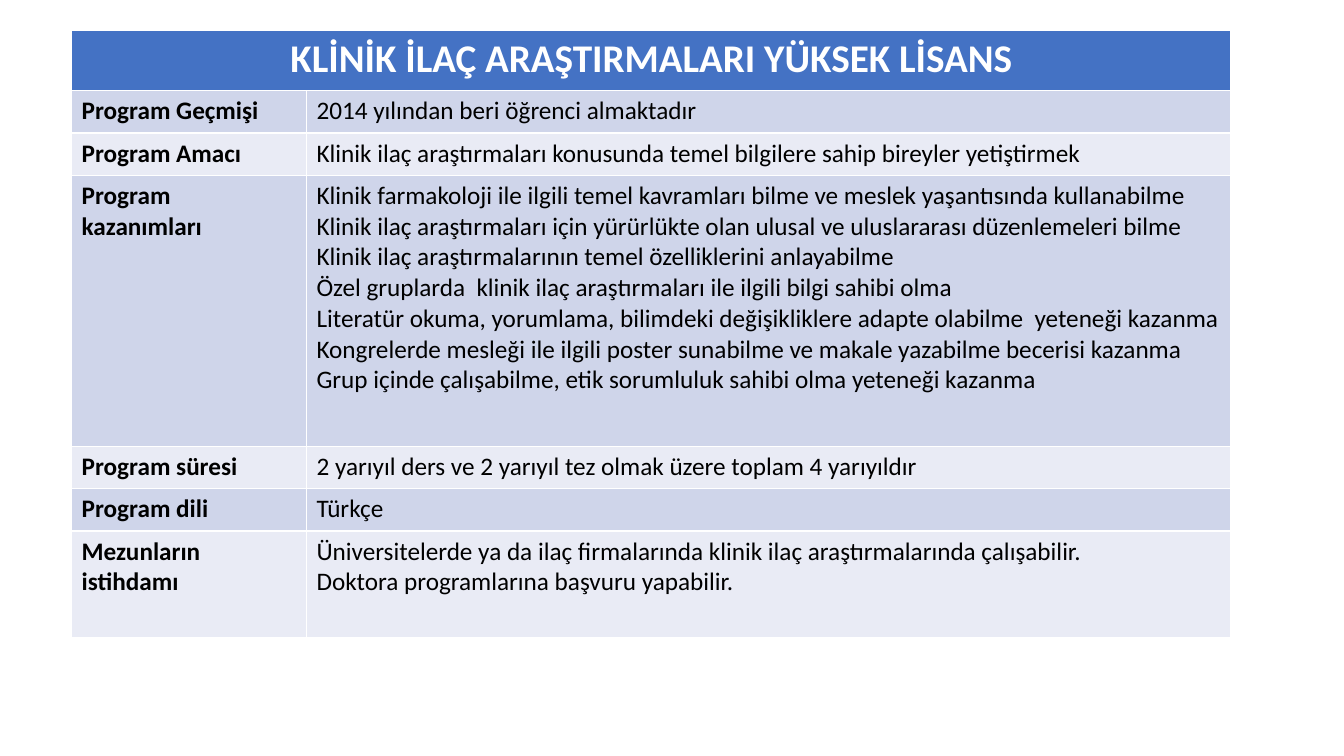
from pptx import Presentation
from pptx.dml.color import RGBColor
from pptx.enum.text import PP_ALIGN
from pptx.util import Inches, Pt

CENTER, LEFT = PP_ALIGN.CENTER, PP_ALIGN.LEFT
WHITE = RGBColor(0xFF, 0xFF, 0xFF)
BLACK = RGBColor(0x00, 0x00, 0x00)
BLUE = RGBColor(0x44, 0x72, 0xC4)
BANDS = [RGBColor(0xCF, 0xD5, 0xEA), RGBColor(0xE9, 0xEB, 0xF5)]
FONT = "Calibri"

TITLE = "KLİNİK İLAÇ ARAŞTIRMALARI YÜKSEK LİSANS"
HEAD = 0.6
SPLIT = 2.33
ROWS = [
    (0.42, "Program Geçmişi", ["2014 yılından beri öğrenci almaktadır"]),
    (0.42, "Program Amacı", [
        "Klinik ilaç araştırmaları konusunda temel bilgilere sahip bireyler yetiştirmek",
    ]),
    (2.69, "Program kazanımları", [
        "Klinik farmakoloji ile ilgili temel kavramları bilme ve meslek yaşantısında kullanabilme",
        "Klinik ilaç araştırmaları için yürürlükte olan ulusal ve uluslararası düzenlemeleri bilme",
        "Klinik ilaç araştırmalarının temel özelliklerini anlayabilme",
        "Özel gruplarda  klinik ilaç araştırmaları ile ilgili bilgi sahibi olma",
        "Literatür okuma, yorumlama, bilimdeki değişikliklere adapte olabilme  yeteneği kazanma",
        "Kongrelerde mesleği ile ilgili poster sunabilme ve makale yazabilme becerisi kazanma",
        "Grup içinde çalışabilme, etik sorumluluk sahibi olma yeteneği kazanma",
    ]),
    (0.42, "Program süresi", [
        "2 yarıyıl ders ve 2 yarıyıl tez olmak üzere toplam 4 yarıyıldır",
    ]),
    (0.42, "Program dili", ["Türkçe"]),
    (1.06, "Mezunların istihdamı", [
        "Üniversitelerde ya da ilaç firmalarında klinik ilaç araştırmalarında çalışabilir.",
        "Doktora programlarına başvuru yapabilir.",
    ]),
]


def fill_cell(cell, lines, fill, size=18, color=BLACK, bold=False, align=LEFT):
    cell.fill.solid()
    cell.fill.fore_color.rgb = fill
    cell.text_frame.text = "\n".join(lines)
    for para in cell.text_frame.paragraphs:
        para.alignment = align
        for run in para.runs:
            run.font.name = FONT
            run.font.size = Pt(size)
            run.font.bold = bold
            run.font.color.rgb = color


def add_program(slide, left, top, width):
    height = HEAD + sum(row[0] for row in ROWS)
    frame = slide.shapes.add_table(
        len(ROWS) + 1, 2, Inches(left), Inches(top), Inches(width), Inches(height))
    table = frame.table
    table.columns[0].width = Inches(SPLIT)
    table.columns[1].width = Inches(width - SPLIT)
    table.rows[0].height = Inches(HEAD)
    title = table.cell(0, 0)
    title.merge(table.cell(0, 1))
    fill_cell(title, [TITLE], BLUE, 28, WHITE, True, CENTER)
    for i, (tall, label, lines) in enumerate(ROWS, 1):
        band = BANDS[(i - 1) % 2]
        table.rows[i].height = Inches(tall)
        fill_cell(table.cell(i, 0), [label], band, bold=True)
        fill_cell(table.cell(i, 1), lines, band)


def main():
    deck = Presentation()
    deck.slide_width = Inches(13.33)
    deck.slide_height = Inches(7.5)
    slide = deck.slides.add_slide(deck.slide_layouts[6])
    add_program(slide, 0.71, 0.3, 11.5)
    deck.save("out.pptx")


if __name__ == "__main__":
    main()
